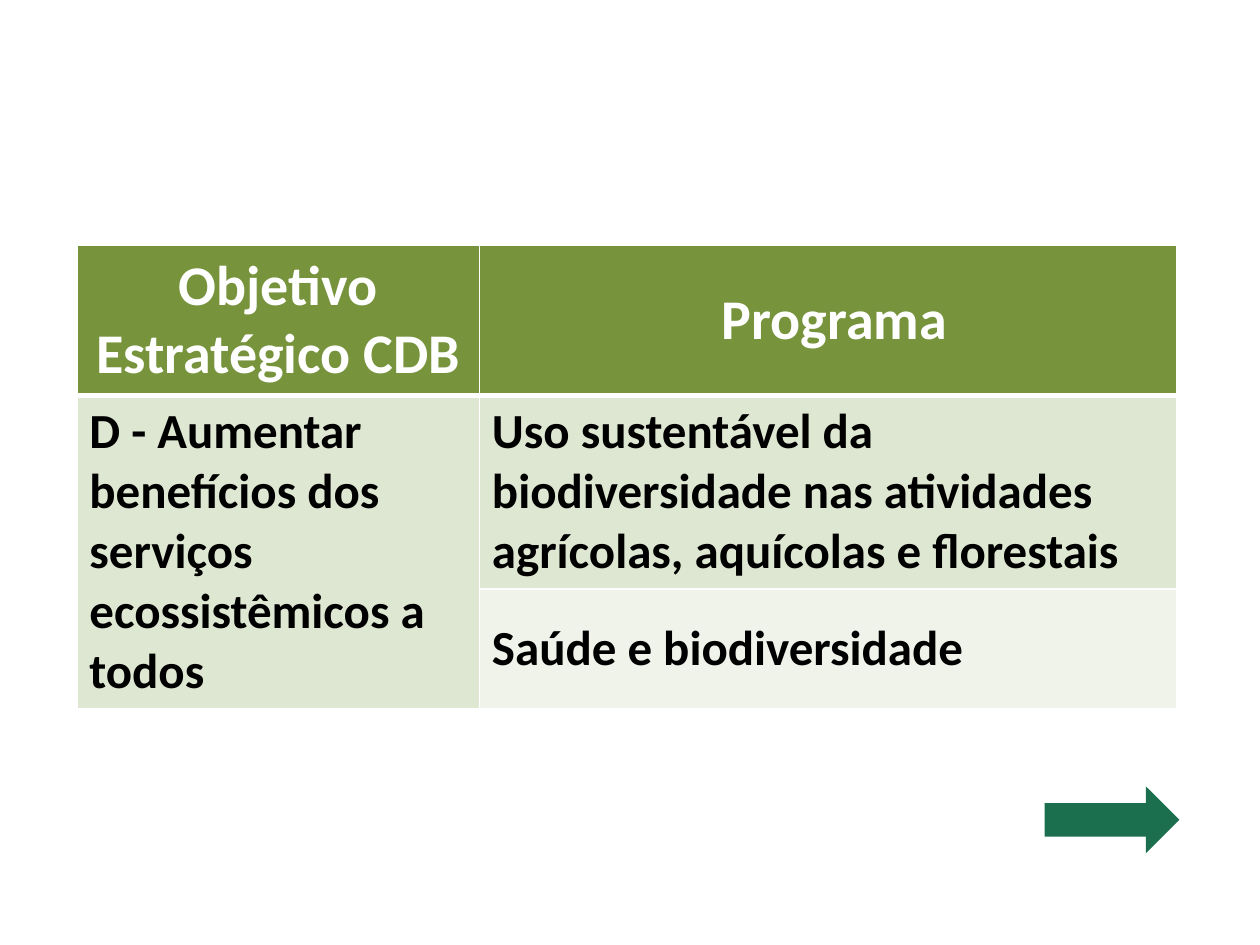
from pptx import Presentation
from pptx import util as u
from pptx.dml.color import RGBColor
from pptx.enum import shapes, text
from pptx.oxml import parse_xml
from pptx.oxml.ns import nsdecls

WIDE, HIGH = u.Inches(10), u.Inches(7.5)
HEAD = dict(size=u.Pt(32), ink="FFFFFF", align=text.PP_ALIGN.CENTER)
BODY = dict(size=u.Pt(28), ink="000000", align=text.PP_ALIGN.LEFT)
CELLS = [
    (0, 0, "Objetivo Estratégico CDB", "77933C", HEAD),
    (0, 1, " Programa", "77933C", HEAD),
    (1, 0, "D - Aumentar benefícios dos serviços ecossistêmicos a todos", "DEE7D1", BODY),
    (1, 1, "Uso sustentável da biodiversidade nas atividades agrícolas, "
           "aquícolas e florestais", "DEE7D1", BODY),
    (2, 1, "Saúde e biodiversidade", "EFF3EA", BODY),
]


def color(code):
    return RGBColor.from_string(code)


def paint(item, code):
    item.fill.solid()
    item.fill.fore_color.rgb = color(code)


def share(left, top, wide, high):
    return [int(WIDE * left), int(HIGH * top), int(WIDE * wide), int(HIGH * high)]


def edge(cell, row):
    props = cell._tc.get_or_add_tcPr()
    sides = {"lnL": 1, "lnR": 1, "lnT": 3 if row == 1 else 1, "lnB": 3 if row == 0 else 1}
    for spot, (side, size) in enumerate(sides.items()):
        props.insert(spot, parse_xml(
            f'<a:{side} {nsdecls("a")} w="{u.Pt(size)}"><a:solidFill>'
            f'<a:srgbClr val="FFFFFF"/></a:solidFill></a:{side}>'))


def write(cell, words, style):
    cell.vertical_anchor = text.MSO_ANCHOR.MIDDLE
    para = cell.text_frame.paragraphs[0]
    para.alignment = style["align"]
    run = para.add_run()
    run.text = words
    for key, value in dict(name="Calibri", size=style["size"], bold=True).items():
        setattr(run.font, key, value)
    run.font.color.rgb = color(style["ink"])


def add_goals(slide, box):
    grid = slide.shapes.add_table(3, 2, *box).table
    for col, part in zip(grid.columns, (0.366, 0.634)):
        col.width = int(box[2] * part)
    for row, part in zip(grid.rows, (0.32, 0.42, 0.26)):
        row.height = int(box[3] * part)
    grid.cell(1, 0).merge(grid.cell(2, 0))
    for row in range(3):
        for col in range(2):
            edge(grid.cell(row, col), row)
    for row, col, words, fill, style in CELLS:
        cell = grid.cell(row, col)
        paint(cell, fill)
        write(cell, words, style)


def add_arrow(slide, box):
    arrow = slide.shapes.add_shape(shapes.MSO_SHAPE.RIGHT_ARROW, *box)
    arrow.shadow.inherit = False
    paint(arrow, "1B6F4F")
    arrow.line.fill.background()


def main():
    deck = Presentation()
    deck.slide_width, deck.slide_height = WIDE, HIGH
    slide = deck.slides.add_slide(deck.slide_layouts[6])
    add_goals(slide, share(0.061, 0.26, 0.873, 0.488))
    add_arrow(slide, share(0.829, 0.832, 0.107, 0.071))
    deck.save("out.pptx")


if __name__ == "__main__":
    main()
